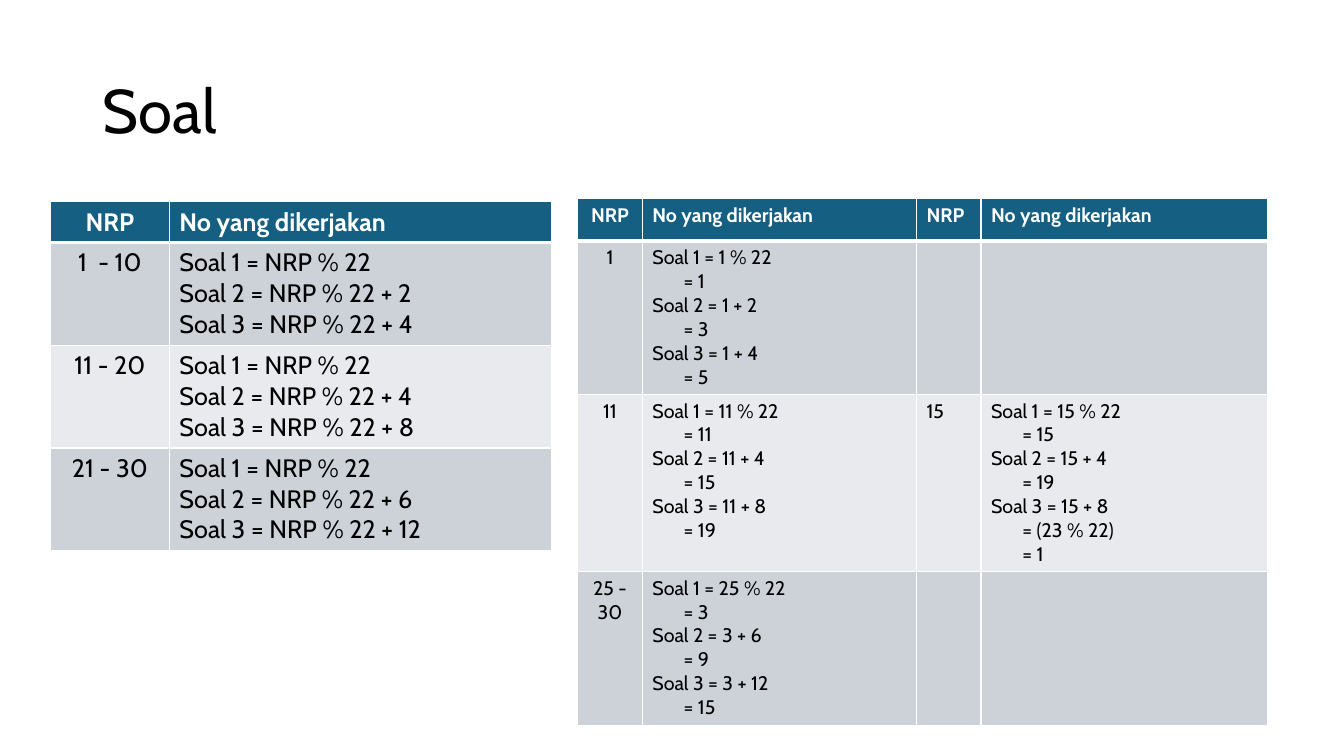
from lxml.etree import SubElement
from pptx import Presentation
from pptx.dml.color import RGBColor
from pptx.enum.text import MSO_ANCHOR, PP_ALIGN
from pptx.oxml.ns import qn
from pptx.util import Inches, Pt

HEAD = "No yang dikerjakan"
RULES = [
    ["NRP", HEAD],
    ["1  - 10", "Soal 1 = NRP % 22\nSoal 2 = NRP % 22 + 2\nSoal 3 = NRP % 22 + 4"],
    ["11 - 20", "Soal 1 = NRP % 22\nSoal 2 = NRP % 22 + 4\nSoal 3 = NRP % 22 + 8"],
    ["21 - 30", "Soal 1 = NRP % 22\nSoal 2 = NRP % 22 + 6\nSoal 3 = NRP % 22 + 12"],
]
# Lines that start with "=" are indented results.
SAMPLES = [
    ["NRP", HEAD, "NRP", HEAD],
    ["1", "Soal 1 = 1 % 22\n= 1\nSoal 2 = 1 + 2\n= 3\nSoal 3 = 1 + 4\n= 5", "", ""],
    ["11", "Soal 1 = 11 % 22\n= 11\nSoal 2 = 11 + 4\n= 15\nSoal 3 = 11 + 8\n= 19",
     "15", "Soal 1 = 15 % 22\n= 15\nSoal 2 = 15 + 4\n= 19\nSoal 3 = 15 + 8\n"
           "= (23 % 22)\n= 1"],
    ["25 - 30", "Soal 1 = 25 % 22\n= 3\nSoal 2 = 3 + 6\n= 9\nSoal 3 = 3 + 12\n= 15",
     "", ""],
]
TABLES = [
    dict(data=RULES, left=0.5, top=2, size=18,
         cols=[1.18, 3.79], rows=[0.4, 1.02, 1.02, 1.02]),
    dict(data=SAMPLES, left=5.73, top=1.97, size=14,
         cols=[0.64, 2.72, 0.64, 2.84], rows=[0.42, 1.51, 1.75, 1.53]),
]
FONT, BLACK, WHITE = "Cabin", "000000", "FFFFFF"
TEAL, BANDS = "156082", ["E8EAED", "CCD2D8"]
INDENT = 0.31


def style(para, size, color, bold=False):
    for name, value in dict(name=FONT, size=Pt(size), bold=bold).items():
        setattr(para.font, name, value)
    para.font.color.rgb = RGBColor.from_string(color)


def border(cell, head):
    """White cell edges; the one under the header is thicker."""
    props = cell._tc.get_or_add_tcPr()
    edges = {"lnL": 1, "lnR": 1}
    if head:
        edges["lnT"] = 1
    edges["lnB"] = 3 if head else 1
    for tag, width in edges.items():
        line = SubElement(props, qn("a:" + tag), w=str(Pt(width)))
        fill = SubElement(line, qn("a:solidFill"))
        SubElement(fill, qn("a:srgbClr"), val=WHITE)


def write(cell, text, size, head, center):
    frame = cell.text_frame
    for n, line in enumerate(text.split("\n")):
        para = frame.add_paragraph() if n else frame.paragraphs[0]
        para.text = line
        if line.startswith("="):
            para._p.get_or_add_pPr().set("marL", str(Inches(INDENT)))
        para.alignment = PP_ALIGN.CENTER if center else PP_ALIGN.LEFT
        style(para, size, WHITE if head else BLACK, head)


def draw(slide, data, left, top, size, cols, rows):
    box = [Inches(v) for v in (left, top, sum(cols), sum(rows))]
    table = slide.shapes.add_table(len(rows), len(cols), *box).table
    for col, width in zip(table.columns, cols):
        col.width = Inches(width)
    for r, (row, height) in enumerate(zip(table.rows, rows)):
        row.height = Inches(height)
        for c, cell in enumerate(row.cells):
            head = r == 0
            border(cell, head)
            cell.fill.solid()
            color = TEAL if head else BANDS[r % 2]
            cell.fill.fore_color.rgb = RGBColor.from_string(color)
            write(cell, data[r][c], size, head, c == 0)


def main():
    deck = Presentation()
    deck.slide_width, deck.slide_height = Inches(13.33), Inches(7.5)
    slide = deck.slides.add_slide(deck.slide_layouts[5])
    title = slide.shapes.title
    place = dict(left=0.92, top=0.4, width=11.5, height=1.45)
    for name, value in place.items():
        setattr(title, name, Inches(value))
    title.text_frame.text = "Soal"
    title.text_frame.vertical_anchor = MSO_ANCHOR.MIDDLE
    para = title.text_frame.paragraphs[0]
    para.alignment, para.line_spacing = PP_ALIGN.LEFT, 0.9
    style(para, 44, BLACK)
    for item in TABLES:
        draw(slide, **item)
    deck.save("out.pptx")


if __name__ == "__main__":
    main()
